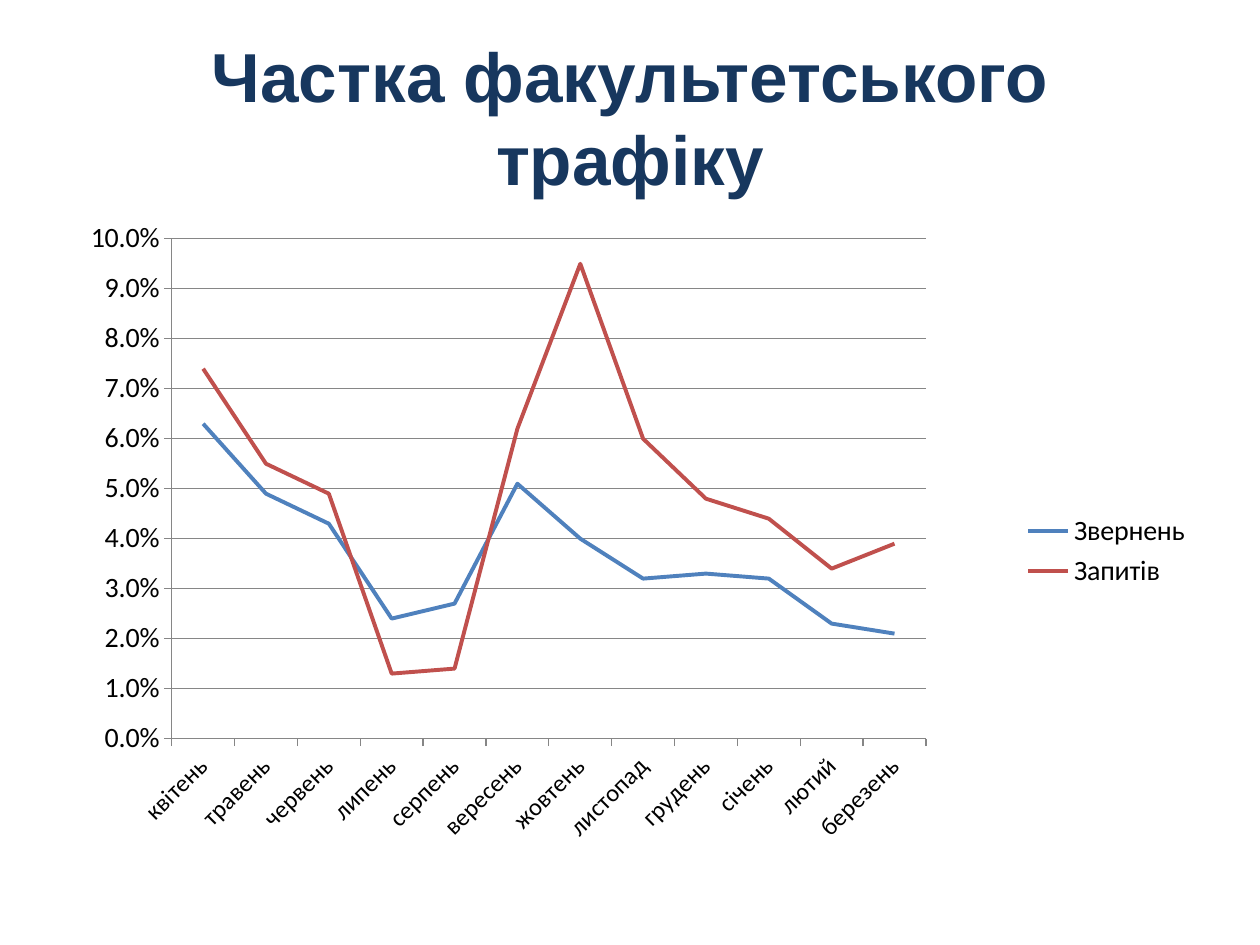
import pptx
import pptx.chart.data
import pptx.dml.color
import pptx.enum.chart
import pptx.enum.text
import pptx.oxml
import pptx.oxml.ns
import pptx.util

COLORS = {
    "title": "17375E",
    "text": "000000",
    "grid": "868686",
    "visits": "4F81BD",
    "requests": "C0504D",
}

MONTHS = ["квітень", "травень", "червень", "липень", "серпень", "вересень",
          "жовтень", "листопад", "грудень", "січень", "лютий", "березень"]

TRAFFIC = [
    ("Звернень", "visits", [0.063, 0.049, 0.043, 0.024, 0.027, 0.051,
                            0.04, 0.032, 0.033, 0.032, 0.023, 0.021]),
    ("Запитів", "requests", [0.074, 0.055, 0.049, 0.013, 0.014, 0.062,
                             0.095, 0.06, 0.048, 0.044, 0.034, 0.039]),
]

PLOT_AREA = {"x": 0.11, "y": 0.05, "w": 0.65, "h": 0.72}


def rgb(name):
    return pptx.dml.color.RGBColor.from_string(COLORS[name])


class SlideBuilder:
    """Style and current slide; boxes are left, top, width, height on a 100 x 75 grid."""

    CELL = pptx.util.Inches(0.1)
    TITLE_FONT = "Arial"
    CHART_FONT = "Calibri"

    def __init__(self, presentation):
        presentation.slide_width = 100 * self.CELL
        presentation.slide_height = 75 * self.CELL
        self.slide = presentation.slides.add_slide(presentation.slide_layouts[5])

    def box(self, *cells):
        return [round(cell * self.CELL) for cell in cells]

    def style_font(self, font, name, size, color, bold=False):
        font.name = name
        font.size = pptx.util.Pt(size)
        font.bold = bold
        font.color.rgb = rgb(color)

    def title(self, text, cells, size):
        title = self.slide.shapes.title
        title.left, title.top, title.width, title.height = self.box(*cells)
        frame = title.text_frame
        frame.text = text
        frame.word_wrap = True
        frame.auto_size = pptx.enum.text.MSO_AUTO_SIZE.NONE
        frame.vertical_anchor = pptx.enum.text.MSO_ANCHOR.MIDDLE
        paragraph = frame.paragraphs[0]
        paragraph.alignment = pptx.enum.text.PP_ALIGN.CENTER
        self.style_font(paragraph.runs[0].font, self.TITLE_FONT, size, "title", bold=True)

    def line_chart(self, categories, series_rows, cells):
        data = pptx.chart.data.CategoryChartData(number_format="0.0%")
        data.categories = categories
        for name, _, values in series_rows:
            data.add_series(name, values)
        chart = self.slide.shapes.add_chart(
            pptx.enum.chart.XL_CHART_TYPE.LINE, *self.box(*cells), data).chart
        chart.has_title = False
        self.style_font(chart.font, self.CHART_FONT, 10, "text")

        chart.plots[0].vary_by_categories = False
        for series, (_, color, _) in zip(chart.plots[0].series, series_rows):
            series.smooth = False
            series.marker.style = pptx.enum.chart.XL_MARKER_STYLE.NONE
            self.style_line(series.format.line, color, 2.25)

        self.axis(chart.category_axis, 14)
        self.axis(chart.value_axis, 16)
        self.value_scale(chart.value_axis)
        chart.category_axis.tick_labels.font  # creates the label text properties
        labels = chart.category_axis._element.find(pptx.oxml.ns.qn("c:txPr"))
        labels.find(pptx.oxml.ns.qn("a:bodyPr")).set("rot", str(-45 * 60000))

        chart.has_legend = True
        chart.legend.position = pptx.enum.chart.XL_LEGEND_POSITION.RIGHT
        chart.legend.include_in_layout = False
        self.style_font(chart.legend.font, self.CHART_FONT, 16, "text")
        self.place_plot(chart, PLOT_AREA)

    def style_line(self, line, color, width):
        line.color.rgb = rgb(color)
        line.width = pptx.util.Pt(width)

    def axis(self, axis, size):
        axis.major_tick_mark = pptx.enum.chart.XL_TICK_MARK.OUTSIDE
        axis.minor_tick_mark = pptx.enum.chart.XL_TICK_MARK.NONE
        self.style_line(axis.format.line, "grid", 0.75)
        self.style_font(axis.tick_labels.font, self.CHART_FONT, size, "text")

    def value_scale(self, axis):
        axis.minimum_scale, axis.maximum_scale, axis.major_unit = 0, 0.1, 0.01
        axis.has_major_gridlines = True
        self.style_line(axis.major_gridlines.format.line, "grid", 0.75)
        axis.tick_labels.number_format = "0.0%"
        axis.tick_labels.number_format_is_linked = False

    def place_plot(self, chart, shares):
        """Fix the inner plot area at shares of the chart's size."""
        modes = "".join(f'<c:{side}Mode val="edge"/>' for side in "xy")
        sizes = "".join(f'<c:{key} val="{share}"/>' for key, share in shares.items())
        layout = pptx.oxml.parse_xml(
            f'<c:layout {pptx.oxml.ns.nsdecls("c")}><c:manualLayout>'
            f'<c:layoutTarget val="inner"/>{modes}{sizes}'
            '</c:manualLayout></c:layout>')
        plot_area = chart._chartSpace.chart.plotArea
        for old_layout in plot_area.findall(pptx.oxml.ns.qn("c:layout")):
            plot_area.remove(old_layout)
        plot_area.insert(0, layout)


def main():
    presentation = pptx.Presentation()
    builder = SlideBuilder(presentation)
    builder.title("Частка факультетського трафіку", (5, 3, 90, 12.5), 39.6)
    builder.line_chart(MONTHS, TRAFFIC, (3.5, 16.2, 92.1, 55.1))
    presentation.save("out.pptx")


if __name__ == "__main__":
    main()
